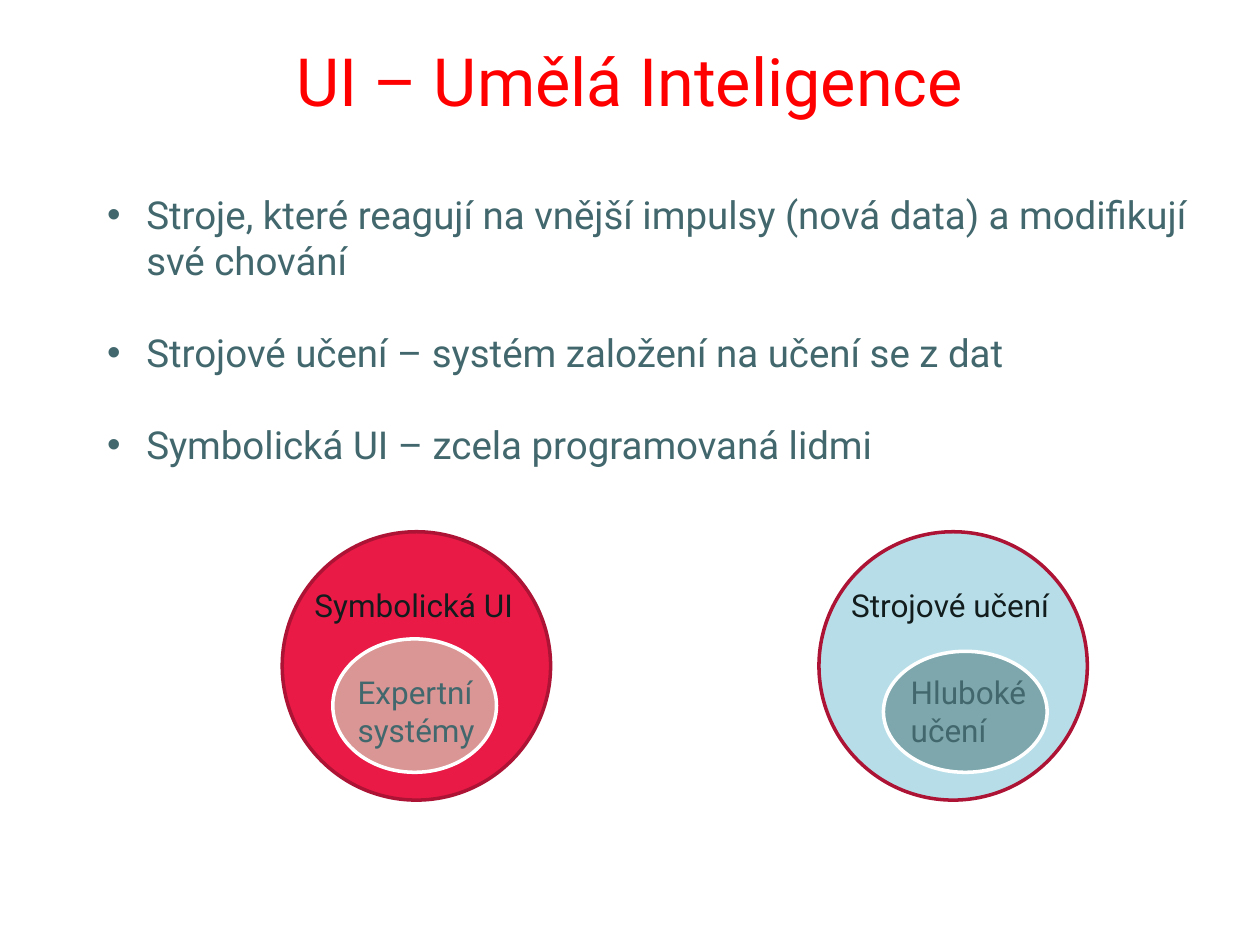
from lxml.etree import SubElement
from pptx import Presentation
from pptx.dml.color import RGBColor
from pptx.enum.shapes import MSO_SHAPE
from pptx.enum.text import MSO_ANCHOR, PP_ALIGN
from pptx.oxml.ns import qn
from pptx.util import Cm, Pt

FONT = "Roboto"
COLORS = {
    "title": "FF0000", "text": "42686D", "label": "121C1D",
    "ring": "AD1334", "white": "FFFFFF",
    "symbolic": "EA1A46", "expert": "D99694",
    "learning": "B7DEE8", "deep": "7DA7AC",
}
BULLETS = [
    "Stroje, které reagují na vnější impulsy (nová data) a modifikují své chování",
    "Strojové učení – systém založení na učení se z dat",
    "Symbolická UI – zcela programovaná lidmi",
]


def rgb(name):
    return RGBColor.from_string(COLORS[name])


def style(p, size, color):
    for r in p.runs:
        r.font.name = FONT
        r.font.size = Pt(size)
        r.font.color.rgb = rgb(color)


def add_title(slide, text):
    sp = slide.shapes.title
    sp.left, sp.top, sp.width, sp.height = Cm(1.27), Cm(0.03), Cm(22.86), Cm(3.18)
    tf = sp.text_frame
    tf.text = text
    tf.vertical_anchor = MSO_ANCHOR.MIDDLE
    p = tf.paragraphs[0]
    p.alignment = PP_ALIGN.CENTER
    style(p, 38, "title")


def add_text(slide, text, box, size, color):
    sp = slide.shapes.add_textbox(*map(Cm, box))
    tf = sp.text_frame
    tf.word_wrap = True
    tf.text = text
    for p in tf.paragraphs:
        style(p, size, color)
    return tf


def add_bullets(slide, items, box):
    tf = add_text(slide, "\n".join(items), box, 22, "text")
    for i, p in enumerate(tf.paragraphs):
        if i:
            p.space_before = Pt(26)
        pPr = p._p.get_or_add_pPr()
        pPr.set("marL", str(Cm(0.79)))
        pPr.set("indent", str(-Cm(0.79)))
        SubElement(pPr, qn("a:buFont"), typeface="Arial")
        SubElement(pPr, qn("a:buChar"), char="•")


def add_ellipse(slide, box, fill, line):
    sp = slide.shapes.add_shape(MSO_SHAPE.OVAL, *map(Cm, box))
    sp.shadow.inherit = False
    sp.fill.solid()
    sp.fill.fore_color.rgb = rgb(fill)
    sp.line.color.rgb = rgb(line)
    sp.line.width = Pt(2)


def add_nested_sets(slide, left, outer, outer_fill, inner, inner_fill,
                    inner_box, inner_text_left):
    """Large circle with its label, holding a smaller labelled ellipse."""
    add_ellipse(slide, (left, 10.72, 5.41, 5.41), outer_fill, "ring")
    add_ellipse(slide, inner_box, inner_fill, "white")
    add_text(slide, outer, (left + 0.4, 11.68, 5, 1.02), 18, "label")
    add_text(slide, inner, (inner_text_left, 13.45, 3.81, 1.8), 18, "text")


def main():
    prs = Presentation()
    prs.slide_width, prs.slide_height = Cm(25.4), Cm(19.05)
    slide = prs.slides.add_slide(prs.slide_layouts[5])

    # Title and main points
    add_title(slide, "UI – Umělá Inteligence")
    add_bullets(slide, BULLETS, (1.91, 3.73, 23.19, 9.65))

    # The two branches of AI
    add_nested_sets(slide, 5.69, "Symbolická UI", "symbolic",
                    "Expertní systémy", "expert", (6.71, 12.88, 3.3, 2.69), 6.96)
    add_nested_sets(slide, 16.51, "Strojové učení", "learning",
                    "Hluboké učení", "deep", (17.81, 13.13, 3.3, 2.44), 18.11)

    prs.save("out.pptx")


if __name__ == "__main__":
    main()
